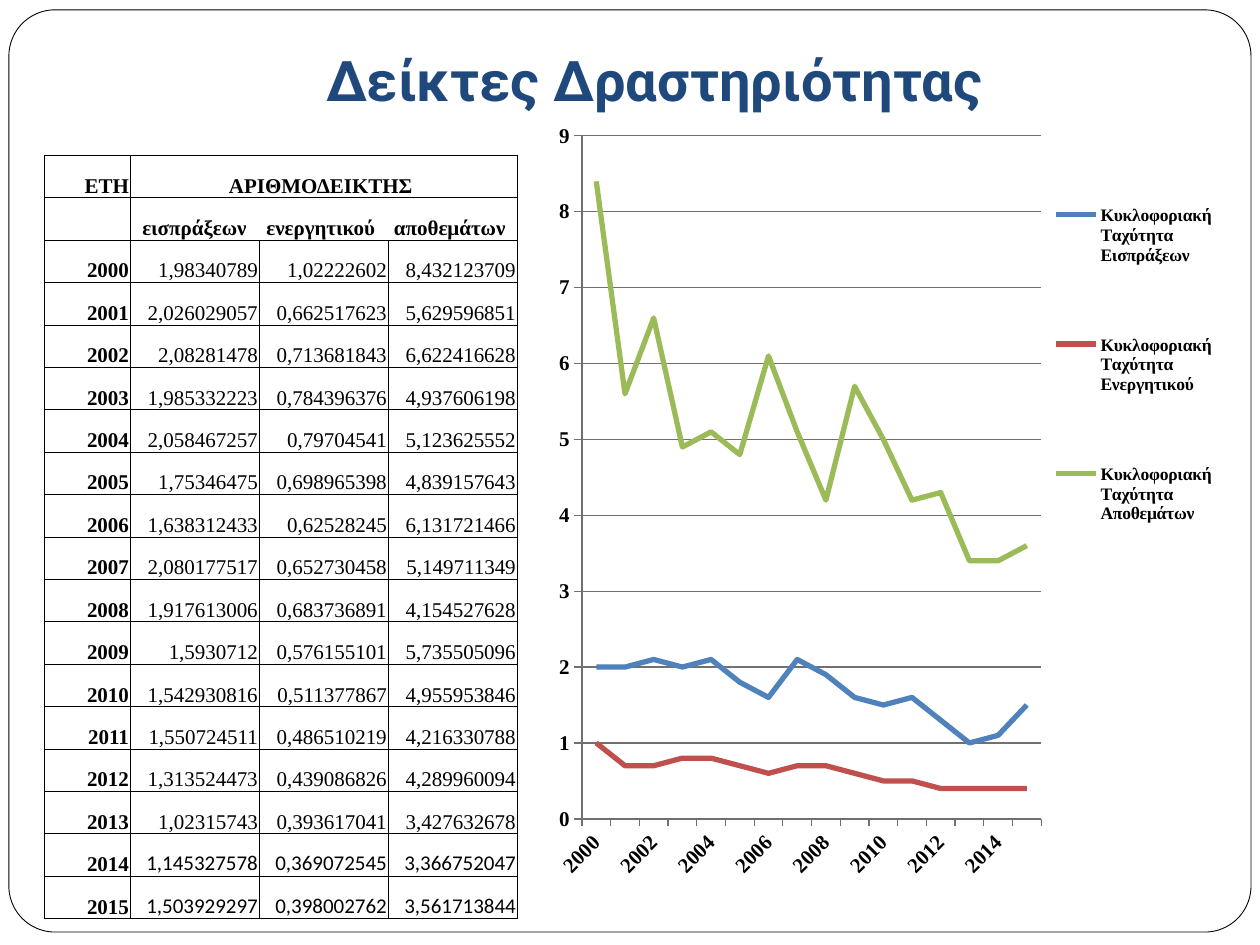
"""Build a slide with a table and a line chart of activity ratios, 2000 to 2015."""
from lxml.etree import SubElement
from pptx import Presentation
from pptx.chart.data import CategoryChartData
from pptx.dml.color import RGBColor
from pptx.enum.chart import XL_CHART_TYPE as ChartType, XL_LEGEND_POSITION as LegendPosition
from pptx.enum.chart import XL_MARKER_STYLE as MarkerStyle, XL_TICK_MARK as TickMark
from pptx.enum.shapes import MSO_SHAPE as ShapeType
from pptx.enum.text import MSO_ANCHOR as Anchor, PP_ALIGN as Align
from pptx.oxml import parse_xml
from pptx.oxml.ns import nsdecls, qn
from pptx.util import Cm, Pt

BLACK = RGBColor(0x00, 0x00, 0x00)
WHITE = RGBColor(0xFF, 0xFF, 0xFF)
NAVY = RGBColor(0x1F, 0x49, 0x7D)
GRAY = RGBColor(0x70, 0x70, 0x70)
BLUE = RGBColor(0x4F, 0x81, 0xBD)
RED = RGBColor(0xC0, 0x50, 0x4D)
GREEN = RGBColor(0x9B, 0xBB, 0x59)
SERIF = "Times New Roman"

RATIOS = [
    ("2000", "1,98340789", "1,02222602", "8,432123709"),
    ("2001", "2,026029057", "0,662517623", "5,629596851"),
    ("2002", "2,08281478", "0,713681843", "6,622416628"),
    ("2003", "1,985332223", "0,784396376", "4,937606198"),
    ("2004", "2,058467257", "0,79704541", "5,123625552"),
    ("2005", "1,75346475", "0,698965398", "4,839157643"),
    ("2006", "1,638312433", "0,62528245", "6,131721466"),
    ("2007", "2,080177517", "0,652730458", "5,149711349"),
    ("2008", "1,917613006", "0,683736891", "4,154527628"),
    ("2009", "1,5930712", "0,576155101", "5,735505096"),
    ("2010", "1,542930816", "0,511377867", "4,955953846"),
    ("2011", "1,550724511", "0,486510219", "4,216330788"),
    ("2012", "1,313524473", "0,439086826", "4,289960094"),
    ("2013", "1,02315743", "0,393617041", "3,427632678"),
    ("2014", "1,145327578", "0,369072545", "3,366752047"),
    ("2015", "1,503929297", "0,398002762", "3,561713844"),
]
HEADERS = [
    ("ΕΤΗ", "ΑΡΙΘΜΟΔΕΙΚΤΗΣ ", "", ""),
    ("", "εισπράξεων", "ενεργητικού ", "αποθεμάτων "),
]
SERIES = [
    ("Κυκλοφοριακή Ταχύτητα Εισπράξεων ", BLUE),
    ("Κυκλοφοριακή Ταχύτητα Ενεργητικού ", RED),
    ("Κυκλοφοριακή Ταχύτητα Αποθεμάτων", GREEN),
]


def set_borders(cell, visible_sides):
    properties = cell._tc.get_or_add_tcPr()
    for side in "LRTB":
        line = SubElement(properties, qn(f"a:ln{side}"), w=str(Pt(0.5)))
        if side in visible_sides:
            fill = SubElement(line, qn("a:solidFill"))
            SubElement(fill, qn("a:srgbClr"), val=str(BLACK))
        else:
            SubElement(line, qn("a:noFill"))


def make_layout(x, y, width, height, target=""):
    return parse_xml(
        f'<c:layout {nsdecls("c")}><c:manualLayout>{target}'
        '<c:xMode val="edge"/><c:yMode val="edge"/>'
        f'<c:x val="{x}"/><c:y val="{y}"/><c:w val="{width}"/><c:h val="{height}"/>'
        "</c:manualLayout></c:layout>"
    )


presentation = Presentation()
presentation.slide_width, presentation.slide_height = Cm(25.4), Cm(19.05)
slide = presentation.slides.add_slide(presentation.slide_layouts[5])

frame = slide.shapes.add_shape(
    ShapeType.ROUNDED_RECTANGLE, Cm(0.18), Cm(0.2), Cm(25.04), Cm(18.59))
frame.adjustments[0] = 0.05
frame.shadow.inherit = False
frame.fill.solid()
frame.fill.fore_color.rgb = WHITE
frame.line.color.rgb = BLACK
frame.line.width = Pt(0.5)
slide.shapes._spTree.insert(2, frame._element)

title = slide.shapes.title
title.left, title.top, title.width, title.height = Cm(2.54), Cm(0.78), Cm(21.59), Cm(1.75)
title_frame = title.text_frame
title_frame.text = "Δείκτες Δραστηριότητας "
title_frame.vertical_anchor = Anchor.BOTTOM
title_frame.margin_bottom = Cm(0.25)
title_frame.paragraphs[0].alignment = Align.CENTER
title_font = title_frame.paragraphs[0].runs[0].font
title_font.name, title_font.size, title_font.bold = "Roboto", Pt(32), True
title_font.color.rgb = NAVY

rows = HEADERS + RATIOS
table = slide.shapes.add_table(
    len(rows), 4, Cm(0.89), Cm(3.13), Cm(9.53), Cm(15.39)).table
table.first_row = table.horz_banding = False
for column, width in zip(table.columns, (1.73, 2.6, 2.6, 2.6)):
    column.width = Cm(width)
table.cell(0, 1).merge(table.cell(0, 3))
for row_index, row in enumerate(rows):
    table.rows[row_index].height = Cm(15.39 / len(rows))
    for column_index, text in enumerate(row):
        cell = table.cell(row_index, column_index)
        is_header = row_index < len(HEADERS)
        open_sides = {1: "R", 2: "LR", 3: "L"}.get(column_index, "") if row_index == 1 else ""
        set_borders(cell, set("LRTB") - set(open_sides))
        cell.fill.background()
        cell.margin_left = cell.margin_right = cell.margin_top = Cm(0.02)
        cell.margin_bottom = 0
        cell.vertical_anchor = Anchor.BOTTOM
        if not text:
            continue
        cell.text_frame.text = text
        paragraph = cell.text_frame.paragraphs[0]
        paragraph.alignment = Align.CENTER if is_header and column_index else Align.RIGHT
        font = paragraph.runs[0].font
        font.name = "Calibri" if row[0] in ("2014", "2015") and column_index else SERIF
        font.size = Pt(12)
        font.bold = is_header or column_index == 0
        font.color.rgb = BLACK

chart_data = CategoryChartData()
chart_data.categories = [row[0] for row in RATIOS]
for column_index, (name, color) in enumerate(SERIES, start=1):
    values = [round(float(row[column_index].replace(",", ".")), 1) for row in RATIOS]
    chart_data.add_series(name, values)
chart = slide.shapes.add_chart(
    ChartType.LINE, Cm(11.04), Cm(2.27), Cm(13.82), Cm(15.65), chart_data).chart
chart.has_title = False
chart.font.name, chart.font.size = SERIF, Pt(10)
chart.font.color.rgb = BLACK
chart.plots[0].vary_by_categories = False
for series, (name, color) in zip(chart.plots[0].series, SERIES):
    series.smooth = False
    series.marker.style = MarkerStyle.NONE
    series.format.line.color.rgb = color
    series.format.line.width = Pt(3)

for axis in (chart.category_axis, chart.value_axis):
    axis.major_tick_mark = TickMark.OUTSIDE
    axis.minor_tick_mark = TickMark.NONE
    axis.format.line.color.rgb = GRAY
    axis.tick_labels.font.size = Pt(12)
    axis.tick_labels.font.bold = True
chart.category_axis._element.find(qn("c:txPr")).find(qn("a:bodyPr")).set("rot", "-2700000")
chart.value_axis.minimum_scale, chart.value_axis.maximum_scale = 0, 9
chart.value_axis.major_unit = 1
chart.value_axis.tick_labels.number_format = "General"
chart.value_axis.tick_labels.number_format_is_linked = False
chart.value_axis.major_gridlines.format.line.color.rgb = GRAY

chart.has_legend = True
legend = chart.legend
legend.position = LegendPosition.RIGHT
legend.include_in_layout = False
legend.font.bold = True
for old_layout in legend._element.findall(qn("c:layout")):
    legend._element.remove(old_layout)
legend._element.find(qn("c:legendPos")).addnext(make_layout(0.73, 0.03, 0.25, 0.59))
plot_area = chart._chartSpace.chart.plotArea
for old_layout in plot_area.findall(qn("c:layout")):
    plot_area.remove(old_layout)
plot_area.insert(0, make_layout(0.05, 0.03, 0.67, 0.88, '<c:layoutTarget val="inner"/>'))

presentation.save("out.pptx")
